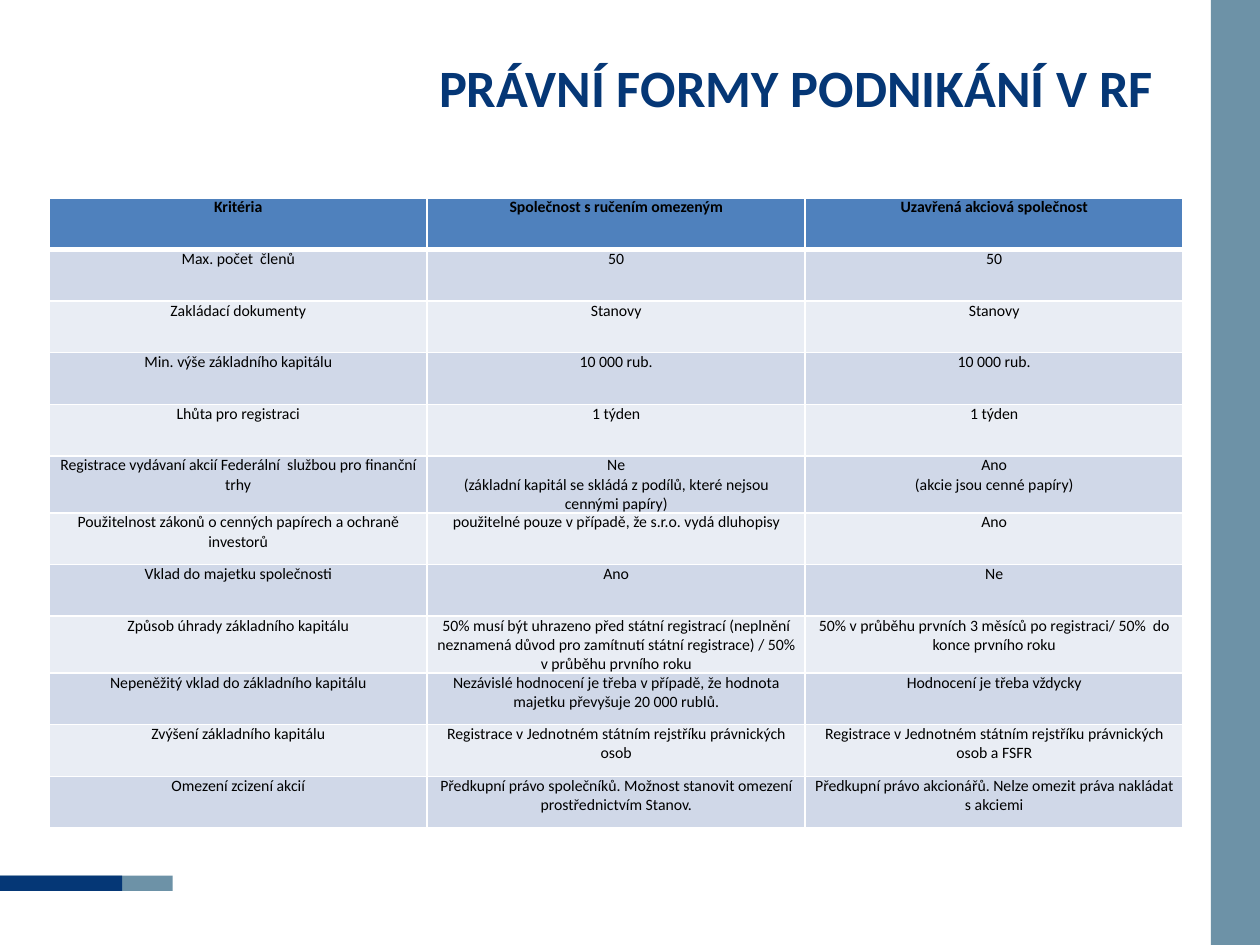
from dataclasses import dataclass

from lxml import etree
from pptx import Presentation
from pptx.dml.color import RGBColor
from pptx.enum.shapes import MSO_SHAPE
from pptx.enum.text import MSO_ANCHOR, PP_ALIGN
from pptx.oxml.ns import qn
from pptx.util import Inches, Pt

RECTANGLE = MSO_SHAPE.RECTANGLE
CENTER = PP_ALIGN.CENTER
TOP, MIDDLE = MSO_ANCHOR.TOP, MSO_ANCHOR.MIDDLE
FONT = "Calibri"
COLORS = {
    "navy": "053776",
    "steel": "6D92A7",
    "header": "4F81BD",
    "odd": "D0D8E8",
    "even": "E9EDF4",
    "border": "FFFFFF",
    "text": "000000",
}


@dataclass(frozen=True)
class Bar:
    left: float
    top: float
    width: float
    height: float
    color: str


BARS = [
    Bar(9.61, 0, 0.4, 7.5, "steel"),
    Bar(-0.01, 6.95, 1.38, 0.12, "steel"),
    Bar(-0.01, 6.95, 0.98, 0.12, "navy"),
]
TITLE = "PRÁVNÍ FORMY PODNIKÁNÍ V RF"
COLUMN_WIDTH = 3
ROW_HEIGHT = 0.41
ROWS = [
    ("Kritéria", "Společnost s ručením omezeným", "Uzavřená akciová společnost"),
    ("Max. počet  členů", "50", "50"),
    ("Zakládací dokumenty", "Stanovy", "Stanovy"),
    ("Min. výše základního kapitálu", "10 000 rub.", "10 000 rub."),
    ("Lhůta pro registraci", "1 týden", "1 týden"),
    (
        "Registrace vydávaní akcií Federální  službou pro finanční trhy",
        "Ne\n(základní kapitál se skládá z podílů, které nejsou cennými papíry)",
        "Ano\n(akcie jsou cenné papíry)",
    ),
    (
        "Použitelnost zákonů o cenných papírech a ochraně investorů",
        "použitelné pouze v případě, že s.r.o. vydá dluhopisy",
        "Ano",
    ),
    ("Vklad do majetku společnosti", "Ano", "Ne"),
    (
        "Způsob úhrady základního kapitálu",
        "50% musí být uhrazeno před státní registrací (neplnění neznamená důvod "
        "pro zamítnutí státní registrace) / 50% v průběhu prvního roku",
        "50% v průběhu prvních 3 měsíců po registraci/ 50%  do konce prvního roku",
    ),
    (
        "Nepeněžitý vklad do základního kapitálu",
        "Nezávislé hodnocení je třeba v případě, že hodnota majetku převyšuje 20 000 rublů.",
        "Hodnocení je třeba vždycky",
    ),
    (
        "Zvýšení základního kapitálu",
        "Registrace v Jednotném státním rejstříku právnických osob",
        "Registrace v Jednotném státním rejstříku právnických osob a FSFR",
    ),
    (
        "Omezení zcizení akcií",
        "Předkupní právo společníků. Možnost stanovit omezení prostřednictvím Stanov.",
        "Předkupní právo akcionářů. Nelze omezit práva nakládat s akciemi",
    ),
]


def rgb(name: str) -> RGBColor:
    return RGBColor.from_string(COLORS[name])


def add_bar(page, bar: Bar) -> None:
    shape = page.shapes.add_shape(
        RECTANGLE, Inches(bar.left), Inches(bar.top), Inches(bar.width), Inches(bar.height)
    )
    shape.shadow.inherit = False
    shape.fill.solid()
    shape.fill.fore_color.rgb = rgb(bar.color)
    shape.line.fill.background()


def write(frame, text: str, size: float, color: str, bold: bool) -> None:
    for index, line in enumerate(text.split("\n")):
        para = frame.add_paragraph() if index else frame.paragraphs[0]
        para.alignment = CENTER
        span = para.add_run()
        span.text = line
        span.font.name = FONT
        span.font.size = Pt(size)
        span.font.bold = bold
        span.font.color.rgb = rgb(color)


def add_title(page) -> None:
    box = page.shapes.add_textbox(Inches(3.03), Inches(0.06), Inches(6.58), Inches(1.25))
    box.text_frame.word_wrap = True
    box.text_frame.vertical_anchor = MIDDLE
    write(box.text_frame, TITLE, 30, "navy", True)


def set_borders(cell, top: float, bottom: float) -> None:
    properties = cell._tc.get_or_add_tcPr()
    for side, width in (("L", 1), ("R", 1), ("T", top), ("B", bottom)):
        line = etree.SubElement(properties, qn(f"a:ln{side}"), w=str(Pt(width)))
        fill = etree.SubElement(line, qn("a:solidFill"))
        etree.SubElement(fill, qn("a:srgbClr"), val=COLORS["border"])


def fill_cell(cell, text: str, row: int) -> None:
    cell.margin_left = cell.margin_right = Inches(0.07)
    cell.margin_top = cell.margin_bottom = Inches(0)
    cell.vertical_anchor = TOP
    set_borders(cell, top=3 if row == 1 else 1, bottom=3 if row == 0 else 1)
    cell.fill.solid()
    cell.fill.fore_color.rgb = rgb("header" if row == 0 else "odd" if row % 2 else "even")
    write(cell.text_frame, text, 9, "text", row == 0)


def add_criteria_table(page) -> None:
    columns = len(ROWS[0])
    table = page.shapes.add_table(
        len(ROWS), columns, Inches(0.39), Inches(1.57),
        Inches(COLUMN_WIDTH * columns), Inches(ROW_HEIGHT * len(ROWS)),
    ).table
    for column in table.columns:
        column.width = Inches(COLUMN_WIDTH)
    for row, texts in enumerate(ROWS):
        table.rows[row].height = Inches(ROW_HEIGHT)
        for column, text in enumerate(texts):
            fill_cell(table.cell(row, column), text, row)


def main() -> None:
    deck = Presentation()
    deck.slide_width, deck.slide_height = Inches(10), Inches(7.5)
    page = deck.slides.add_slide(deck.slide_layouts[6])
    for bar in BARS:
        add_bar(page, bar)
    add_title(page)
    add_criteria_table(page)
    deck.save("out.pptx")


if __name__ == "__main__":
    main()
